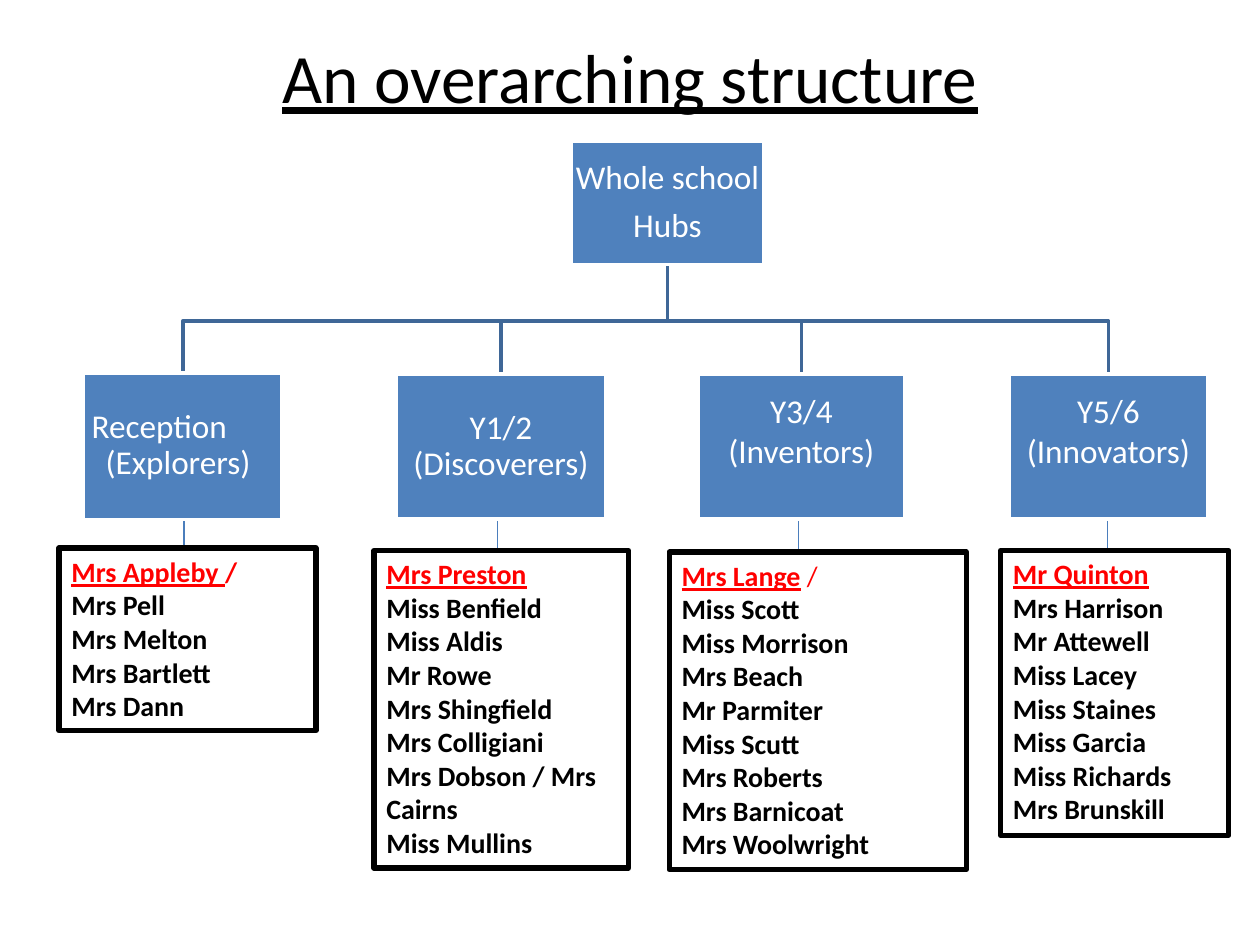
from lxml.etree import SubElement
from pptx import Presentation
from pptx.dml.color import RGBColor
from pptx.enum.shapes import MSO_CONNECTOR, MSO_SHAPE
from pptx.enum.text import MSO_ANCHOR as Anchor, MSO_AUTO_SIZE as AutoSize, PP_ALIGN as Align
from pptx.oxml.ns import qn
from pptx.util import Cm, Pt

COLORS = {"box": "4F81BD", "tree": "3F6797", "link": "4B7EBC",
          "white": "FFFFFF", "black": "000000", "leader": "FF0000"}
FONT = "Calibri"
TRUNK_Y = 6.47

ROOT = (11.51, 2.84, 3.89, 2.49)
# Each hub: heading box, heading style, staff box, link x, leader runs, staff.
# A leader run is (text, bold, underline).
HUBS = [
    {"box": (1.68, 7.52, 4.01, 2.95), "lines": ["Reception", "(Explorers)"],
     "indents": [0.14, 0.42],
     "staff_box": (1.19, 11.05, 5.18, 3.68), "link_x": 3.71,
     "leader": [("Mrs Appleby ", True, True), ("/", True, False)],
     "staff": ["Mrs Pell", "Mrs Melton", "Mrs Bartlett", "Mrs Dann"]},
    {"box": (7.98, 7.54, 4.24, 2.92), "lines": ["Y1/2 (Discoverers)"],
     "staff_box": (7.54, 11.1, 5.13, 6.4), "link_x": 10.03,
     "leader": [("Mrs Preston", True, True)],
     "staff": ["Miss Benfield", "Miss Aldis", "Mr Rowe", "Mrs Shingfield",
               "Mrs Colligiani", "Mrs Dobson / Mrs Cairns", "Miss Mullins"]},
    {"box": (14.07, 7.54, 4.17, 2.92), "lines": ["Y3/4", "(Inventors)"],
     "spacing": 1.0, "bottom": 0.68,
     "staff_box": (13.49, 11.13, 5.99, 6.4), "link_x": 16.1,
     "leader": [("Mrs Lange", True, True), (" /", False, False)],
     "staff": ["Miss Scott", "Miss Morrison", "Mrs Beach", "Mr Parmiter",
               "Miss Scutt", "Mrs Roberts", "Mrs Barnicoat", "Mrs Woolwright"]},
    {"box": (20.35, 7.54, 3.99, 2.92), "lines": ["Y5/6", "(Innovators)"],
     "spacing": 1.0, "bottom": 0.68,
     "staff_box": (20.17, 11.1, 4.6, 5.74), "link_x": 22.33,
     "leader": [("Mr Quinton", True, True)],
     "staff": ["Mrs Harrison", "Mr Attewell", "Miss Lacey", "Miss Staines",
               "Miss Garcia", "Miss Richards", "Mrs Brunskill"]},
]


def color(name):
    return RGBColor.from_string(COLORS[name])


def style_line(shape, name, width):
    shape.line.color.rgb = color(name)
    shape.line.width = Pt(width)


def style_font(font, size, name):
    font.name = FONT
    font.size = Pt(size)
    font.color.rgb = color(name)


def add_box(slide, box, fill, line, width):
    shape = slide.shapes.add_shape(MSO_SHAPE.RECTANGLE, *map(Cm, box))
    shape.shadow.inherit = False
    shape.fill.solid()
    shape.fill.fore_color.rgb = color(fill)
    style_line(shape, line, width)
    shape.text_frame.word_wrap = True
    return shape


def add_title(slide, box, text):
    title = slide.shapes.title
    title.left, title.top, title.width, title.height = map(Cm, box)
    frame = title.text_frame
    frame.text = text
    frame.auto_size = AutoSize.NONE
    frame.vertical_anchor = Anchor.MIDDLE
    paragraph = frame.paragraphs[0]
    paragraph.alignment = Align.CENTER
    style_font(paragraph.font, 39.6, "black")
    paragraph.font.underline = True


def add_link(slide, x, top, bottom):
    link = slide.shapes.add_connector(
        MSO_CONNECTOR.STRAIGHT, Cm(x), Cm(top), Cm(x), Cm(bottom))
    style_line(link, "link", 0.75)
    SubElement(link._element.spPr, qn("a:effectLst"))


def add_branch(slide, parent, child):
    """Elbow line from the foot of the parent box to the head of the child."""
    start_x = parent[0] + parent[2] / 2
    end_x = child[0] + child[2] / 2
    builder = slide.shapes.build_freeform(Cm(start_x), Cm(parent[1] + parent[3]))
    corners = [(start_x, TRUNK_Y), (end_x, TRUNK_Y), (end_x, child[1])]
    builder.add_line_segments([(Cm(x), Cm(y)) for x, y in corners], close=False)
    branch = builder.convert_to_shape()
    branch.shadow.inherit = False
    branch.fill.background()
    style_line(branch, "tree", 2)


def add_heading(slide, box, lines, spacing=0.9, after=0, bottom=0.03, indents=None):
    frame = add_box(slide, box, "box", "white", 2).text_frame
    frame.vertical_anchor = Anchor.MIDDLE
    frame.margin_left = frame.margin_right = frame.margin_top = Cm(0.03)
    frame.margin_bottom = Cm(bottom)
    frame.text = "\n".join(lines)
    for index, paragraph in enumerate(frame.paragraphs):
        paragraph.alignment = Align.LEFT if indents else Align.CENTER
        paragraph.line_spacing = spacing
        paragraph.space_after = Pt(after)
        style_font(paragraph.font, 19, "white")
        if indents:
            paragraph._p.get_or_add_pPr().set("marL", str(Cm(indents[index])))


def add_staff(slide, box, leader, staff):
    frame = add_box(slide, box, "white", "black", 3).text_frame
    frame.vertical_anchor = Anchor.TOP
    frame.auto_size = AutoSize.SHAPE_TO_FIT_TEXT
    frame.text = "\n".join([""] + staff)
    for paragraph in frame.paragraphs:
        paragraph.alignment = Align.LEFT
        style_font(paragraph.font, 16, "black")
        paragraph.font.bold = True
    first = frame.paragraphs[0]
    first.font.color.rgb = color("leader")
    for text, bold, underline in leader:
        run = first.add_run()
        run.text = text
        run.font.bold = bold
        run.font.underline = underline


def main():
    presentation = Presentation()
    presentation.slide_width, presentation.slide_height = Cm(25.4), Cm(19.05)
    slide = presentation.slides.add_slide(presentation.slide_layouts[5])
    add_title(slide, (1.27, 0.76, 22.86, 1.55), "An overarching structure")

    # Lines lie behind the boxes
    for hub in HUBS:
        add_link(slide, hub["link_x"], 10.2, 12.5)
        add_branch(slide, ROOT, hub["box"])

    # Heading boxes and staff lists
    add_heading(slide, ROOT, ["Whole school", "Hubs"], after=6.65)
    for hub in HUBS:
        options = {key: hub[key] for key in ("spacing", "bottom", "indents") if key in hub}
        add_heading(slide, hub["box"], hub["lines"], **options)
        add_staff(slide, hub["staff_box"], hub["leader"], hub["staff"])

    presentation.save("out.pptx")


if __name__ == "__main__":
    main()
